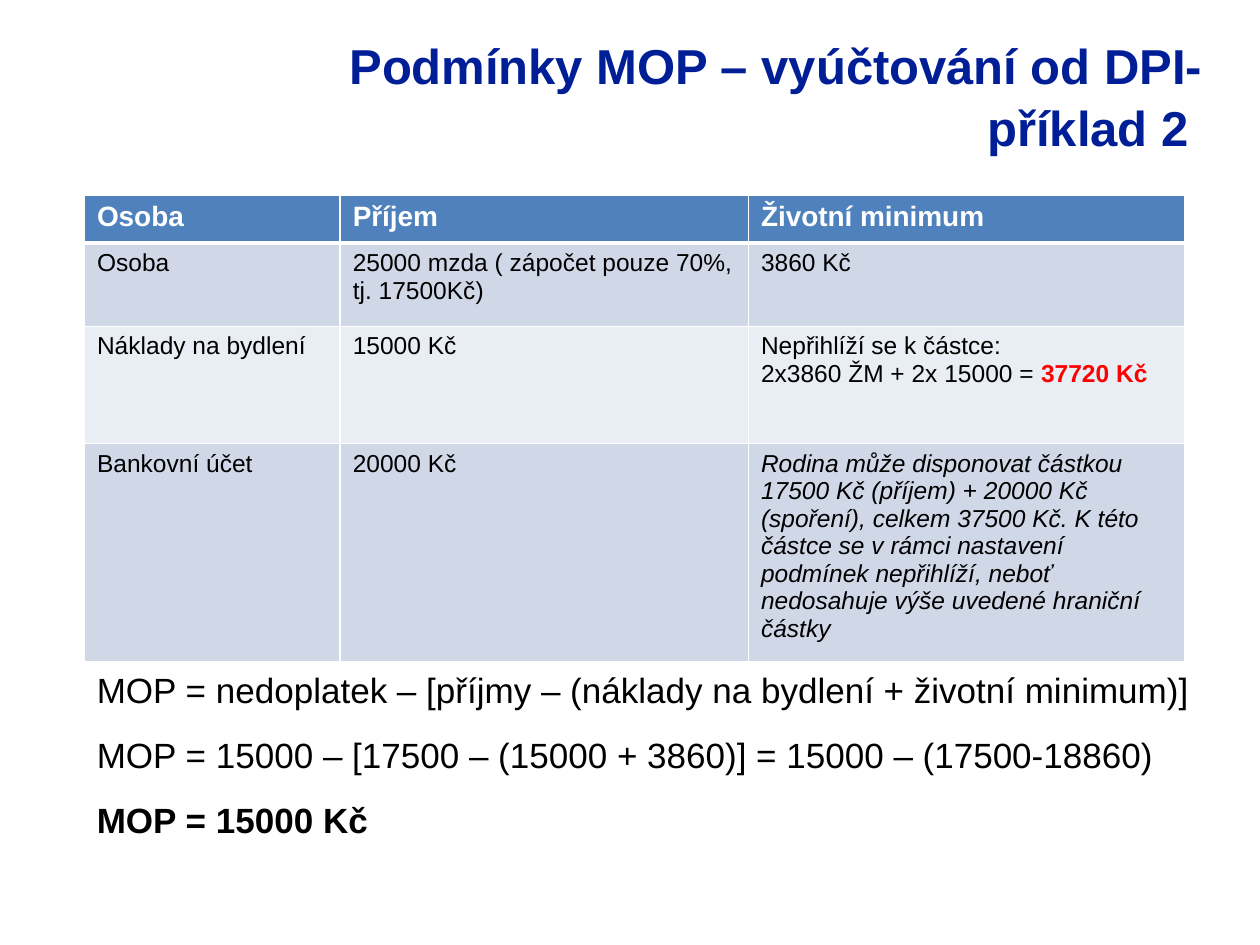
from dataclasses import dataclass

import pptx
import pptx.dml.color
import pptx.enum.text
import pptx.oxml.ns
import pptx.util
from lxml import etree
from pptx.dml.color import RGBColor
from pptx.util import Inches

NAVY = RGBColor(0x00, 0x1E, 0x96)
BLUE = RGBColor(0x4F, 0x81, 0xBD)
DARK = RGBColor(0xD0, 0xD8, 0xE8)
PALE = RGBColor(0xE9, 0xED, 0xF4)
WHITE = RGBColor(0xFF, 0xFF, 0xFF)
BLACK = RGBColor(0x00, 0x00, 0x00)
RED = RGBColor(0xFF, 0x00, 0x00)
FONT = "Arial"


@dataclass
class Run:
    text: str
    size: int = 14
    color: RGBColor = BLACK
    bold: bool = False
    italic: bool = False


Lines = list[list[Run]]


def write(frame, lines: Lines, align=None, gap: int = 0, pitch: float = 1.0) -> None:
    """Fill a text frame, one paragraph for each list of runs."""
    frame.word_wrap = True
    for i, line in enumerate(lines):
        para = frame.add_paragraph() if i else frame.paragraphs[0]
        para.alignment = align
        para.line_spacing = pitch
        if i:
            para.space_before = pptx.util.Pt(gap)
        for item in line:
            run = para.add_run()
            run.text = item.text
            font = run.font
            font.name = FONT
            font.size = pptx.util.Pt(item.size)
            font.bold = item.bold
            font.italic = item.italic
            font.color.rgb = item.color


def add_text(slide, left: float, top: float, width: float, height: float,
             lines: Lines, align=None, gap: int = 0) -> None:
    box = slide.shapes.add_textbox(
        Inches(left), Inches(top), Inches(width), Inches(height))
    write(box.text_frame, lines, align, gap, 1.05)


def edge(cell, head: bool, below: bool) -> None:
    """Draw white borders, thick between the header and the first row."""
    props = cell._tc.get_or_add_tcPr()
    thick = {"lnB": head, "lnT": below}
    for i, side in enumerate(("lnL", "lnR", "lnT", "lnB")):
        width = pptx.util.Pt(3 if thick.get(side) else 1)
        line = etree.Element(pptx.oxml.ns.qn("a:" + side), w=str(int(width)))
        fill = etree.SubElement(line, pptx.oxml.ns.qn("a:solidFill"))
        etree.SubElement(fill, pptx.oxml.ns.qn("a:srgbClr"), val=str(WHITE))
        props.insert(i, line)


def add_grid(slide, rows: list[list[Lines]]) -> None:
    widths = [2.03, 3.24, 3.46]
    heights = [0.38, 0.66, 0.93, 0.93]
    table = slide.shapes.add_table(
        len(rows), len(widths), Inches(0.67), Inches(1.55),
        Inches(sum(widths)), Inches(sum(heights))).table
    for col, width in zip(table.columns, widths):
        col.width = Inches(width)
    for r, (row, height) in enumerate(zip(rows, heights)):
        table.rows[r].height = Inches(height)
        for c, lines in enumerate(row):
            cell = table.cell(r, c)
            cell.fill.solid()
            cell.fill.fore_color.rgb = BLUE if r == 0 else DARK if r % 2 else PALE
            edge(cell, r == 0, r == 1)
            write(cell.text_frame, lines)


def head(text: str) -> Lines:
    return [[Run(text, 16, WHITE, bold=True)]]


def plain(text: str) -> Lines:
    return [[Run(text)]]


ROWS = [
    [head("Osoba"), head("Příjem"), head("Životní minimum")],
    [plain("Osoba"), plain("25000 mzda ( zápočet pouze 70%, tj. 17500Kč)"),
     plain("3860 Kč")],
    [plain("Náklady na bydlení"), plain("15000 Kč"),
     [[Run("Nepřihlíží se k částce:")],
      [Run("2x3860 ŽM + 2x 15000 = "), Run("37720 Kč", color=RED, bold=True)]]],
    [plain("Bankovní účet"), plain("20000 Kč"),
     [[Run("Rodina může disponovat částkou 17500 Kč (příjem) + 20000 Kč "
           "(spoření), celkem 37500 Kč. K této částce se v rámci nastavení "
           "podmínek nepřihlíží, neboť nedosahuje výše uvedené hraniční "
           "částky", italic=True)]]],
]
SUMS = [
    [Run("MOP = nedoplatek – [příjmy – (náklady na bydlení + životní minimum)]", 20)],
    [Run("MOP = 15000 – [17500 – (15000 + 3860)] = 15000 – (17500-18860)", 20)],
    [Run("MOP = 15000 Kč", 20, bold=True)],
]


def main() -> None:
    deck = pptx.Presentation()
    deck.slide_width, deck.slide_height = Inches(10), Inches(7.5)
    slide = deck.slides.add_slide(deck.slide_layouts[6])
    add_text(slide, 2.4, 0.21, 7.24, 1.5,
             [[Run("Podmínky MOP – vyúčtování od DPI- příklad 2 ", 28, NAVY, True)]],
             pptx.enum.text.PP_ALIGN.RIGHT)
    add_text(slide, 0.67, 5.24, 8.9, 1.68, SUMS, gap=12)
    add_grid(slide, ROWS)
    deck.save("out.pptx")


if __name__ == "__main__":
    main()
